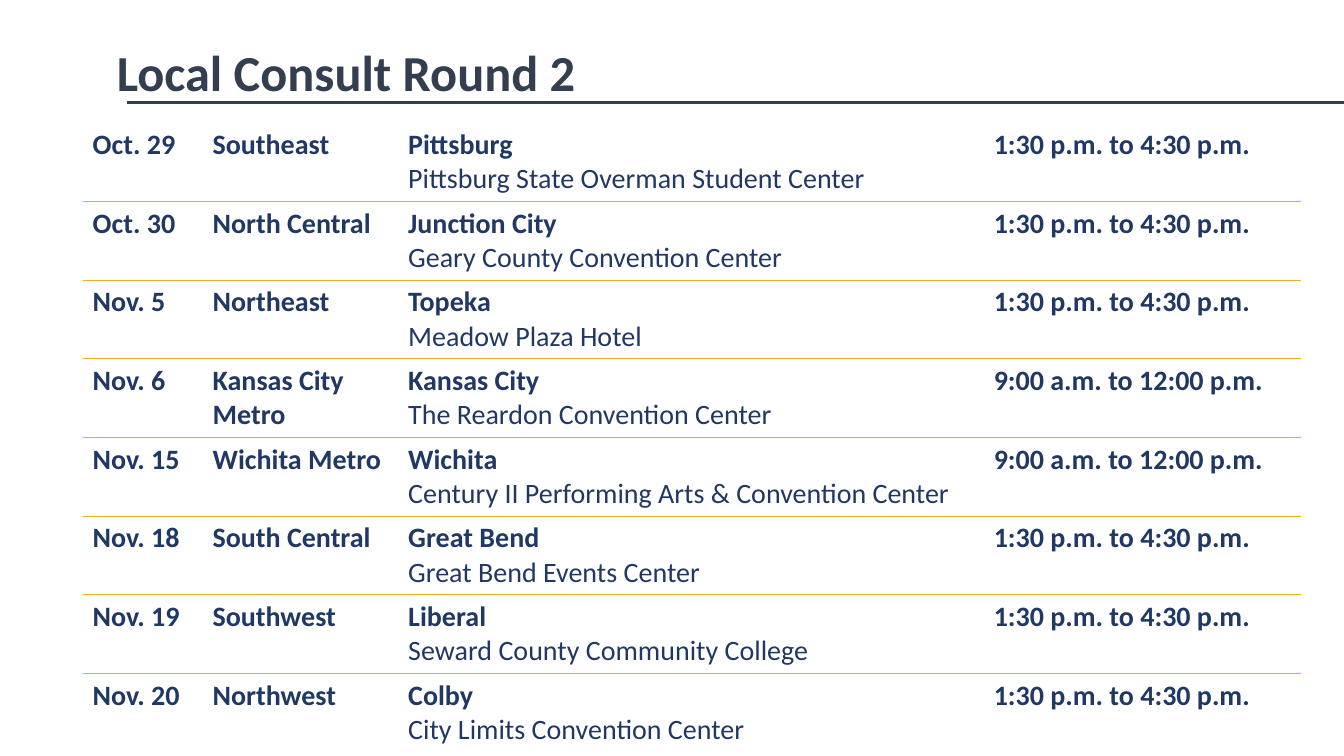
import pptx
import pptx.util
import pptx.dml.color
import pptx.enum.shapes
import pptx.enum.text
import pptx.oxml
import pptx.oxml.ns

Pt = pptx.util.Pt
COLORS = {"slate": "333F50", "navy": "203864", "gold": "EFAF1C"}
WIDE, HIGH = 960, 540
COLS = (85.7, 139.7, 418.3, 226.8)
ROW = 56.2
NOON = "9:00 a.m. to 12:00 p.m."
LATE = "1:30 p.m. to 4:30 p.m."
VISITS = [
    ("Oct. 29", "Southeast", "Pittsburg", "Pittsburg State Overman Student Center", LATE),
    ("Oct. 30", "North Central", "Junction City", "Geary County Convention Center", LATE),
    ("Nov. 5", "Northeast", "Topeka", "Meadow Plaza Hotel", LATE),
    ("Nov. 6", "Kansas City Metro", "Kansas City", "The Reardon Convention Center", NOON),
    ("Nov. 15", "Wichita Metro", "Wichita",
     "Century II Performing Arts & Convention Center", NOON),
    ("Nov. 18", "South Central", "Great Bend", "Great Bend Events Center", LATE),
    ("Nov. 19", "Southwest", "Liberal", "Seward County Community College", LATE),
    ("Nov. 20", "Northwest", "Colby", "City Limits Convention Center", LATE),
]


def tint(name):
    return pptx.dml.color.RGBColor.from_string(COLORS[name])


def write(para, text, size=20, color="navy", bold=True, space=None):
    run = para.add_run()
    run.text = text
    font = run.font
    font.name, font.size, font.bold = "Calibri", Pt(size), bold
    font.color.rgb = tint(color)
    if space:
        para.line_spacing = space


def edge(cell, side):
    """Draw a gold line on one side of a cell: "T" or "B"."""
    props = cell._tc.get_or_add_tcPr()
    line = pptx.oxml.parse_xml(
        f'<a:ln{side} {pptx.oxml.ns.nsdecls("a")} w="{Pt(1)}"><a:solidFill>'
        f'<a:srgbClr val="{COLORS["gold"]}"/></a:solidFill></a:ln{side}>')
    props.insert(len(props.xpath("a:lnT")), line)


def header(slide, left, top, width, height):
    """Title with a rule that runs to the right edge of the slide."""
    box = slide.shapes.add_textbox(Pt(left), Pt(top), Pt(width), Pt(height))
    frame = box.text_frame
    frame.word_wrap = True
    frame.vertical_anchor = pptx.enum.text.MSO_ANCHOR.MIDDLE
    write(frame.paragraphs[0], "Local Consult Round 2", size=36, color="slate", space=0.9)

    level = Pt(top + height - 5.1)
    rule = slide.shapes.add_connector(
        pptx.enum.shapes.MSO_CONNECTOR.STRAIGHT, Pt(left + 14.4), level, Pt(WIDE), level)
    rule.line.color.rgb = tint("slate")
    rule.line.width = Pt(2.25)
    rule._element.spPr.append(
        pptx.oxml.parse_xml(f'<a:effectLst {pptx.oxml.ns.nsdecls("a")}/>'))


def schedule(slide, left, top):
    """Table of visits with a line between rows."""
    count = len(VISITS)
    table = slide.shapes.add_table(
        count, len(COLS), Pt(left), Pt(top), Pt(sum(COLS)), Pt(ROW * count)).table
    table.first_row = table.horz_banding = False
    style = table._tbl.tblPr.xpath("a:tableStyleId")[0]
    style.text = "{2D5ABB26-0587-4C30-8999-92F81FD0307C}"
    for col, width in zip(table.columns, COLS):
        col.width = Pt(width)
    for i, (date, region, city, venue, hours) in enumerate(VISITS):
        table.rows[i].height = Pt(ROW)
        for j, text in enumerate((date, region, city, hours)):
            cell = table.cell(i, j)
            write(cell.text_frame.paragraphs[0], text)
            if i > 0:
                edge(cell, "T")
            if i < count - 1:
                edge(cell, "B")
            cell.fill.background()
        write(table.cell(i, 2).text_frame.add_paragraph(), venue, bold=False)


def main():
    deck = pptx.Presentation()
    deck.slide_width, deck.slide_height = Pt(WIDE), Pt(HIGH)
    slide = deck.slides.add_slide(deck.slide_layouts[6])
    header(slide, 76.3, 28.8, 858.2, 49.7)
    schedule(slide, 59, 87.8)
    deck.save("out.pptx")


if __name__ == "__main__":
    main()
